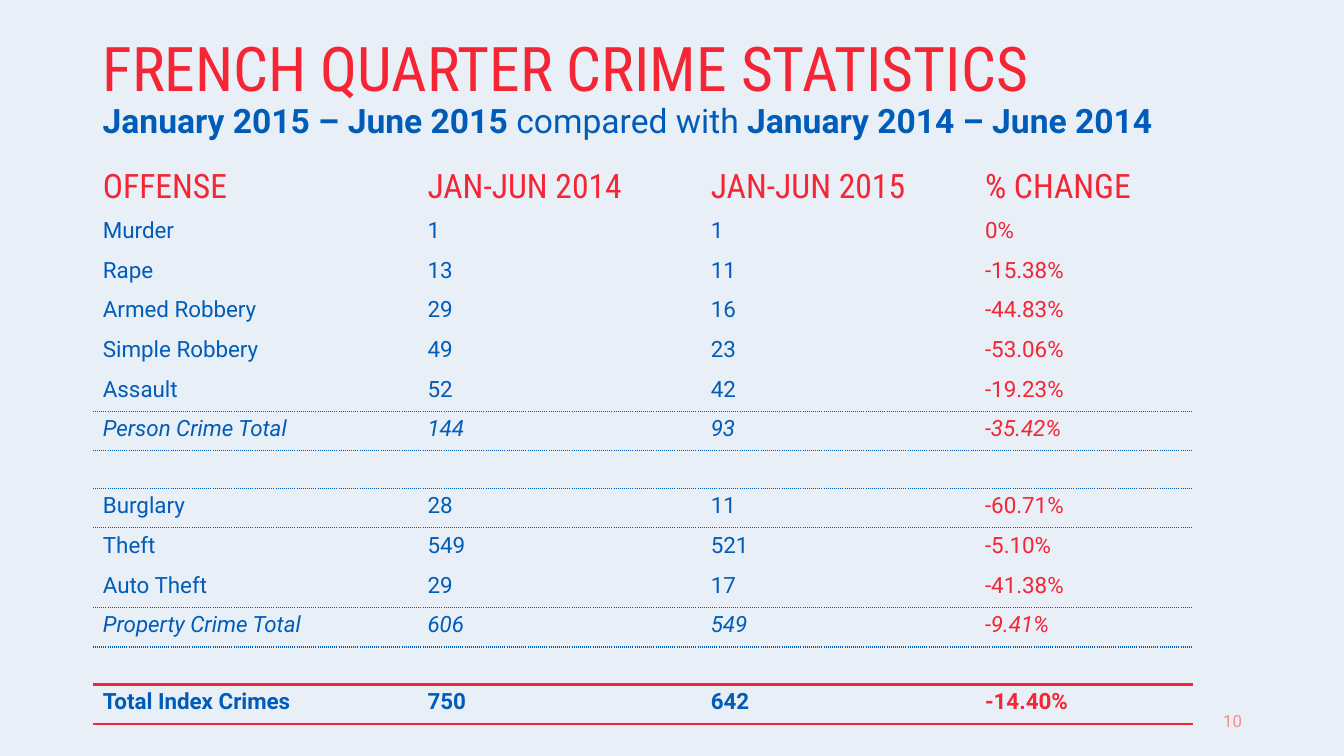
from lxml.etree import SubElement
from pptx import Presentation
from pptx.dml.color import RGBColor
from pptx.enum.text import MSO_ANCHOR, PP_ALIGN
from pptx.oxml import parse_xml
from pptx.oxml.ns import nsdecls, qn
from pptx.util import Cm, Pt

COLORS = {"background": "E9EFF7", "red": "F42534", "blue": "005CB9", "pink": "F78E90"}
NO_GRID_STYLE = "{2D5ABB26-0587-4C30-8999-92F81FD0307C}"


def add_run(paragraph, text, color, **formats):
    run = paragraph.add_run()
    run.text = text
    run.font.color.rgb = RGBColor.from_string(COLORS[color])
    for key, value in formats.items():
        setattr(run.font, key, value)


def add_border(cell, side, color, points, dash):
    cell.fill.background()
    border = parse_xml(
        f'<a:{side} {nsdecls("a")} w="{Pt(points)}"><a:solidFill>'
        f'<a:srgbClr val="{COLORS[color]}"/></a:solidFill>'
        f'<a:prstDash val="{dash}"/></a:{side}>'
    )
    properties = cell._tc.get_or_add_tcPr()
    properties.insert(len(properties) - 1, border)


deck = Presentation()
deck.slide_width, deck.slide_height = Cm(33.87), Cm(19.05)
slide = deck.slides.add_slide(deck.slide_layouts[6])
slide.background.fill.solid()
slide.background.fill.fore_color.rgb = RGBColor.from_string(COLORS["background"])

heading = slide.shapes.add_textbox(Cm(2.34), Cm(0.41), Cm(29.21), Cm(3.68)).text_frame
heading.word_wrap = True
heading.vertical_anchor = MSO_ANCHOR.MIDDLE
title = heading.paragraphs[0]
title.line_spacing = 0.9
add_run(title, "FRENCH QUARTER CRIME STATISTICS", "red", name="Roboto Condensed", size=Pt(44))
title.add_line_break()
for period, bold in [
    ("January 2015 – June 2015 ", True),
    ("compared with ", False),
    ("January 2014 – June 2014", True),
]:
    add_run(title, period, "blue", name="Roboto", size=Pt(24), bold=bold)

offenses = [
    ("OFFENSE", "JAN-JUN 2014", "JAN-JUN 2015", "% CHANGE"),
    ("Murder", "1", "1", "0%"),
    ("Rape", "13", "11", "-15.38%"),
    ("Armed Robbery", "29", "16", "-44.83%"),
    ("Simple Robbery", "49", "23", "-53.06%"),
    ("Assault", "52", "42", "-19.23%"),
    ("Person Crime Total", "144", "93", "-35.42%"),
    ("", "", "", ""),
    ("Burglary", "28", "11", "-60.71%"),
    ("Theft", "549", "521", "-5.10%"),
    ("Auto Theft", "29", "17", "-41.38%"),
    ("Property Crime Total", "606", "549", "-9.41%"),
    ("", "", "", ""),
    ("Total Index Crimes", "750", "642", "-14.40%"),
]
DOTTED, SOLID = ("blue", 1, "sysDot"), ("red", 2.25, "solid")
rules_below = {5: DOTTED, 6: DOTTED, 7: DOTTED, 10: DOTTED, 11: DOTTED, 12: SOLID, 13: SOLID}

statistics = slide.shapes.add_table(
    len(offenses), 4, Cm(2.34), Cm(4.09), Cm(27.72), Cm(14.15)
).table
statistics.first_row = statistics.horz_banding = False
statistics._tbl.tblPr.find(qn("a:tableStyleId")).text = NO_GRID_STYLE
for column, width in zip(statistics.columns, (8.18, 7.14, 6.91, 5.49)):
    column.width = Cm(width)

for r, offense in enumerate(offenses):
    is_header = r == 0
    statistics.rows[r].height = Cm(1.27 if is_header else 1 if offense[0] else 0.94)
    formats = {
        "name": "Roboto Condensed" if is_header else "Roboto",
        "size": Pt(24 if is_header else 16),
        "bold": offense[0].startswith("Total"),
        "italic": offense[0].endswith("Crime Total"),
    }
    for c, entry in enumerate(offense):
        cell = statistics.cell(r, c)
        cell.fill.background()
        paragraph = cell.text_frame.paragraphs[0]
        if entry:
            add_run(paragraph, entry, "red" if is_header or c == 3 else "blue", **formats)
        else:
            SubElement(paragraph._p, qn("a:endParaRPr"), sz="1600")
        for side, rule in (("lnT", rules_below.get(r - 1)), ("lnB", rules_below.get(r))):
            if rule:
                add_border(cell, side, *rule)

page = slide.shapes.add_textbox(Cm(23.93), Cm(17.65), Cm(7.62), Cm(1.02)).text_frame
page.word_wrap = True
page.vertical_anchor = MSO_ANCHOR.MIDDLE
page.paragraphs[0].alignment = PP_ALIGN.RIGHT
add_run(page.paragraphs[0], "10", "pink", name="Roboto", size=Pt(12))

deck.save("out.pptx")
